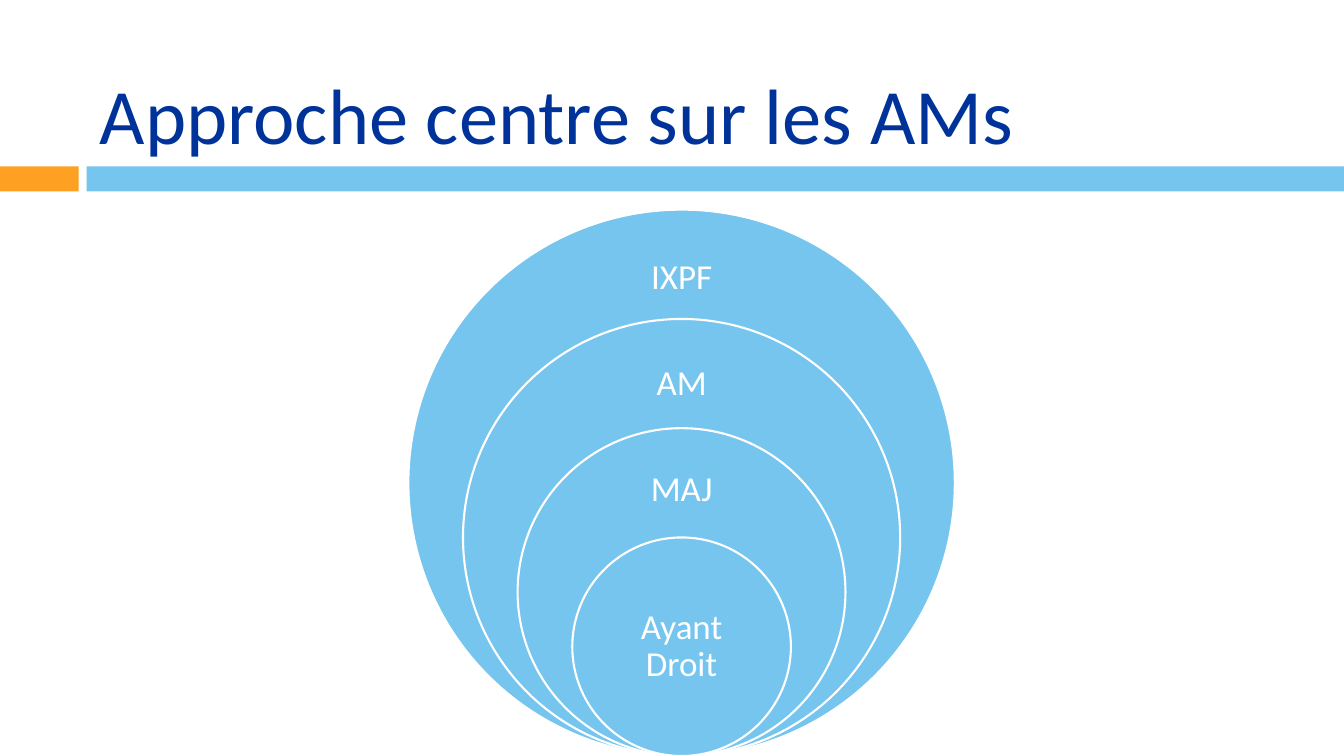
from pptx import Presentation
from pptx import util as u
from pptx.dml.color import RGBColor
from pptx.enum import shapes, text

WIDTH, HEIGHT = u.Inches(13.33), u.Inches(7.5)
NAVY = RGBColor(0x00, 0x33, 0x99)
SKY = RGBColor(0x76, 0xC5, 0xEF)
ORANGE = RGBColor(0xFE, 0xA0, 0x22)
WHITE = RGBColor(0xFF, 0xFF, 0xFF)

# label, top of its box and height of its box as shares of the circle
RINGS = [
    ("IXPF", 0.05, 0.15),
    ("AM", 0.06, 0.18),
    ("MAJ", 0.075, 0.225),
    ("Ayant Droit", 0.25, 0.5),
]


def write(frame, words, *, size, color, align, anchor, inset=None, spacing=1.0):
    """Put formatted text into a text frame."""
    frame.word_wrap = True
    frame.auto_size = text.MSO_AUTO_SIZE.NONE
    frame.vertical_anchor = anchor
    if inset is not None:
        frame.margin_left = frame.margin_right = inset
        frame.margin_top = frame.margin_bottom = inset
    para = frame.paragraphs[0]
    para.alignment = align
    para.line_spacing = spacing
    span = para.add_run()
    span.text = words
    span.font.name = "Calibri"
    span.font.size = u.Pt(size)
    span.font.color.rgb = color


def add_solid(page, kind, box, fill, line=None):
    """Draw a flat preset shape in the given box."""
    shape = page.shapes.add_shape(kind, *map(int, box))
    shape.shadow.inherit = False
    shape.fill.solid()
    shape.fill.fore_color.rgb = fill
    if line is None:
        shape.line.fill.background()
    else:
        shape.line.color.rgb = line
        shape.line.width = u.Pt(1.5)


def add_band(page, box):
    """Draw the orange and blue band across the box."""
    left, top, width, height = box
    for start, end, fill in ((0, 0.0585, ORANGE), (0.0645, 1, SKY)):
        part = (left + start * width, top, (end - start) * width, height)
        add_solid(page, shapes.MSO_SHAPE.RECTANGLE, part, fill)


def add_title(page, box, words):
    """Move the title placeholder to the box and fill it."""
    title = page.shapes.title
    title.left, title.top, title.width, title.height = box
    write(title.text_frame, words, size=56, color=NAVY,
          align=text.PP_ALIGN.LEFT, anchor=text.MSO_ANCHOR.BOTTOM)


def add_rings(page, box):
    """Nest labelled circles that share the lowest point of a square box."""
    left, top, side, _ = box
    middle, bottom = left + side / 2, top + side
    label_width = 0.28 * side
    for index, (words, label_top, label_height) in enumerate(RINGS):
        size = side * (1 - index / (len(RINGS) + 1))
        ring_top = bottom - size
        add_solid(page, shapes.MSO_SHAPE.OVAL,
                  (middle - size / 2, ring_top, size, size), SKY, WHITE)
        label = page.shapes.add_textbox(
            int(middle - label_width / 2), int(ring_top + label_top * size),
            int(label_width), int(label_height * size))
        write(label.text_frame, words, size=25, color=WHITE,
              align=text.PP_ALIGN.CENTER, anchor=text.MSO_ANCHOR.MIDDLE,
              inset=u.Inches(0.19), spacing=0.9)


def main():
    """Build and save the deck."""
    deck = Presentation()
    deck.slide_width, deck.slide_height = WIDTH, HEIGHT
    page = deck.slides.add_slide(deck.slide_layouts[5])
    add_band(page, (0, u.Inches(1.65), WIDTH, u.Inches(0.25)))
    add_title(page, (u.Inches(0.89), u.Inches(0.17), u.Inches(11.89), u.Inches(1.47)),
              "Approche centre sur les AMs")
    side = u.Inches(5.42)
    add_rings(page, (u.Inches(4.05), HEIGHT - side, side, side))
    deck.save("out.pptx")


if __name__ == "__main__":
    main()
